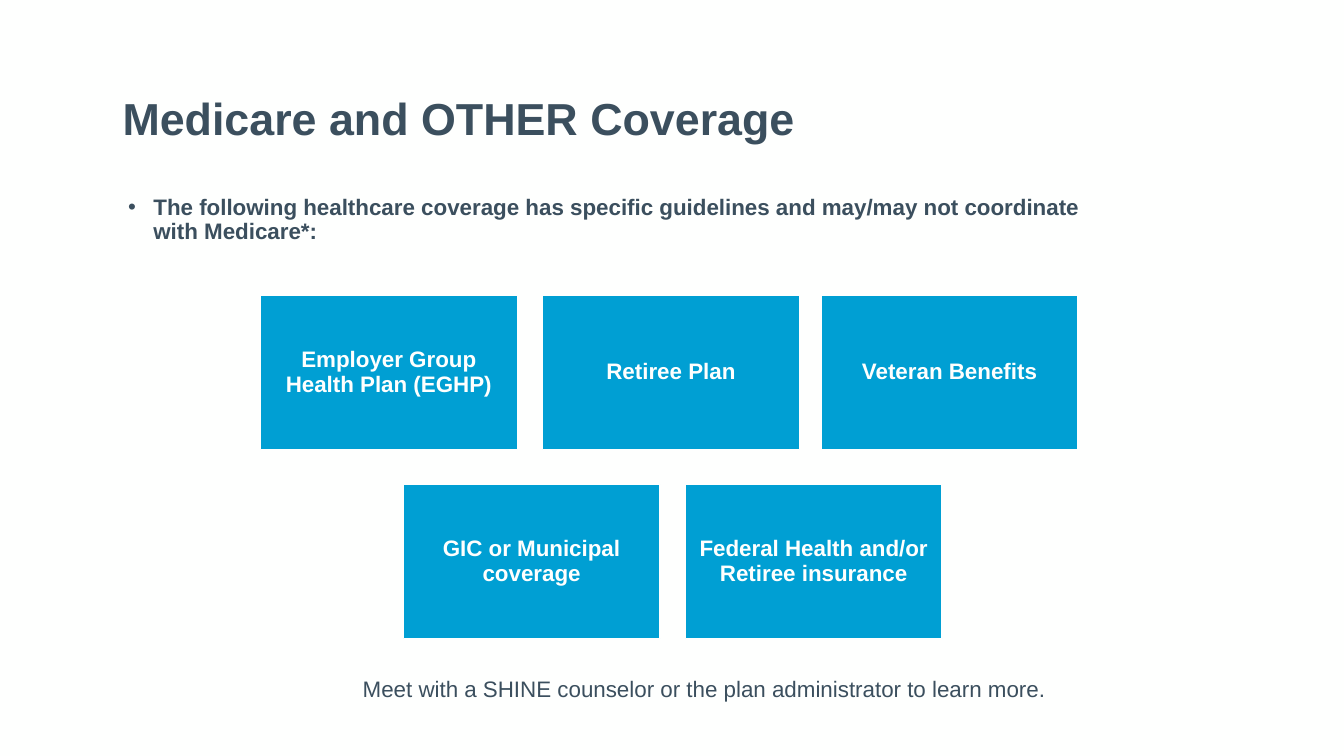
from lxml import etree
from pptx import Presentation
from pptx.dml.color import RGBColor
from pptx.enum.shapes import MSO_SHAPE
from pptx.enum.text import MSO_ANCHOR, PP_ALIGN
from pptx.oxml.ns import qn
from pptx.util import Pt

RECTANGLE = MSO_SHAPE.RECTANGLE
MIDDLE, BOTTOM = MSO_ANCHOR.MIDDLE, MSO_ANCHOR.BOTTOM
CENTER, LEFT = PP_ALIGN.CENTER, PP_ALIGN.LEFT
SLATE, BLUE, WHITE = "3B4F5E", "009FD3", "FEFFFE"


def color(hex_value):
    return RGBColor.from_string(hex_value)


def write(box, text, size, hex_value, bold=True, align=LEFT, inset=None, anchor=None):
    frame = box.text_frame
    frame.word_wrap = True
    if anchor is not None:
        frame.vertical_anchor = anchor
    if inset is not None:
        frame.margin_left = frame.margin_right = Pt(inset)
        frame.margin_top = frame.margin_bottom = Pt(inset)
    para = frame.paragraphs[0]
    para.alignment = align
    para.line_spacing = 0.9
    span = para.add_run()
    span.text = text
    span.font.name = "Arial"
    span.font.size = Pt(size)
    span.font.bold = bold
    span.font.color.rgb = color(hex_value)
    return para


deck = Presentation()
deck.slide_width, deck.slide_height = Pt(960), Pt(540)
page = deck.slides.add_slide(deck.slide_layouts[6])
page.background.fill.solid()
page.background.fill.fore_color.rgb = color(WHITE)

# Title
title = page.shapes.add_textbox(Pt(87.5), Pt(47.5), Pt(826), Pt(56))
write(title, "Medicare and OTHER Coverage", 32, SLATE, inset=0, anchor=BOTTOM)

# Introductory bullet
intro = page.shapes.add_textbox(Pt(84.5), Pt(136.8), Pt(708), Pt(43.2))
para = write(
    intro,
    "The following healthcare coverage has specific guidelines "
    "and may/may not coordinate with Medicare*:",
    16, SLATE,
)
properties = para._p.get_or_add_pPr()
properties.set("marL", str(Pt(18)))
properties.set("indent", str(-Pt(18)))
etree.SubElement(properties, qn("a:buFont")).set("typeface", "Arial")
etree.SubElement(properties, qn("a:buChar")).set("char", "•")

# Coverage cards: row top, then left edge and label of each card
card_rows = [
    (211.2, [
        (186, "Employer Group Health Plan (EGHP)"),
        (387.5, "Retiree Plan"),
        (586.5, "Veteran Benefits"),
    ]),
    (346.2, [
        (288, "GIC or Municipal coverage"),
        (489.5, "Federal Health and/or Retiree insurance"),
    ]),
]
for top, cards in card_rows:
    for left, label in cards:
        card = page.shapes.add_shape(RECTANGLE, Pt(left), Pt(top), Pt(183.5), Pt(110))
        card.shadow.inherit = False
        card.fill.solid()
        card.fill.fore_color.rgb = color(BLUE)
        card.line.color.rgb = color(WHITE)
        card.line.width = Pt(1)
        write(card, label, 16, WHITE, align=CENTER, inset=5, anchor=MIDDLE)

# Closing advice
advice = page.shapes.add_textbox(Pt(252), Pt(481), Pt(708), Pt(43.2))
write(
    advice,
    "Meet with a SHINE counselor or the plan administrator to learn more.",
    16, SLATE, bold=False,
)

deck.save("out.pptx")
